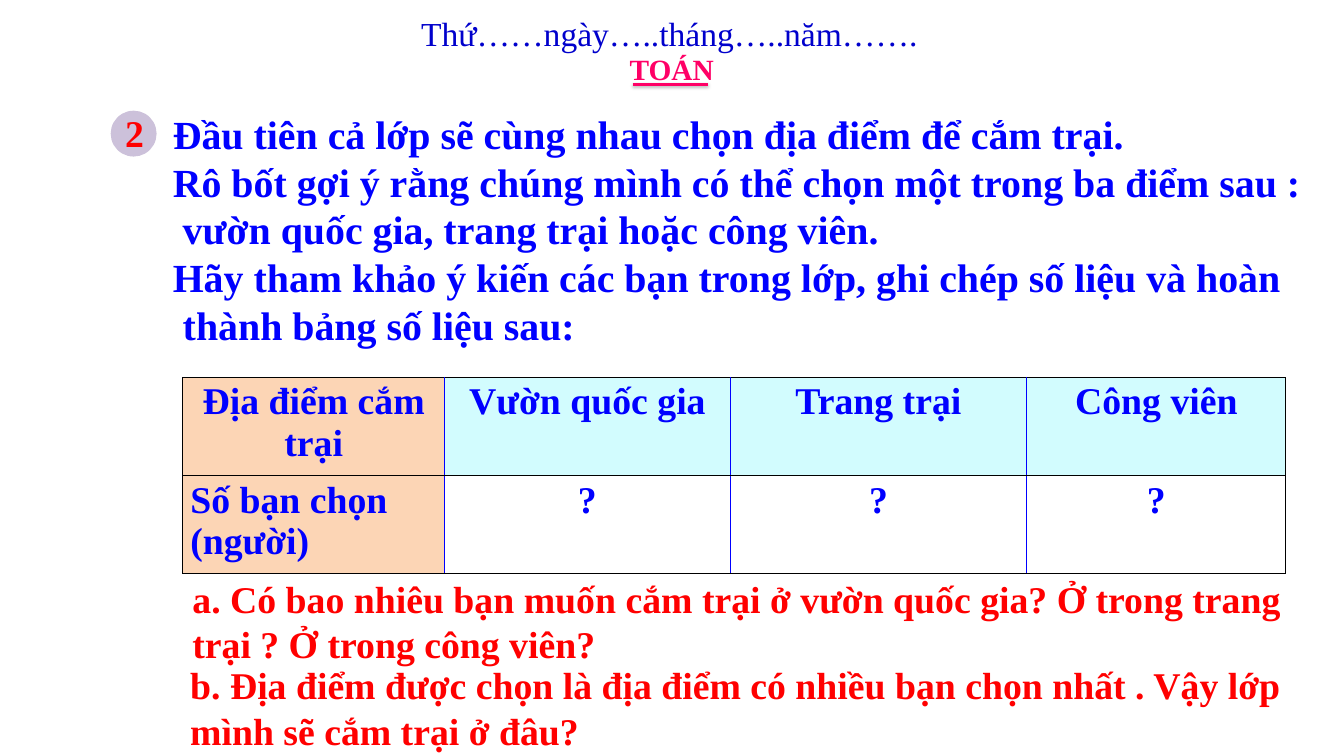
from lxml import etree
from pptx import Presentation
from pptx.dml.color import RGBColor
from pptx.enum.shapes import MSO_CONNECTOR, MSO_SHAPE
from pptx.enum.text import MSO_AUTO_SIZE, PP_ALIGN
from pptx.oxml import parse_xml
from pptx.oxml.ns import nsdecls, qn
from pptx.util import Inches, Pt

FONT = "Times New Roman"
NAVY = RGBColor(0x00, 0x00, 0xCC)
BLUE = RGBColor(0x00, 0x00, 0xFF)
PINK = RGBColor(0xFF, 0x00, 0x66)
RED = RGBColor(0xFF, 0x00, 0x00)
LILAC = RGBColor(0xCC, 0xC1, 0xDA)
PEACH = RGBColor(0xFC, 0xD5, 0xB5)
AQUA = RGBColor(0xD2, 0xFC, 0xFE)
WHITE = RGBColor(0xFF, 0xFF, 0xFF)
BLACK = RGBColor(0x00, 0x00, 0x00)

INTRO = [
    "Đầu tiên cả lớp sẽ cùng nhau chọn địa điểm để cắm trại.",
    "Rô bốt gợi ý rằng chúng mình có thể chọn một trong ba điểm sau :",
    " vườn quốc gia, trang trại hoặc công viên.",
    "Hãy tham khảo ý kiến các bạn trong lớp, ghi chép số liệu và hoàn",
    " thành bảng số liệu sau:",
]
# lines, box (left, top, width, height), size, colour, bold, wrap
TEXTS = [
    (["Thứ……ngày…..tháng…..năm……."], (5.48, 0.12, 6.84, 0.64), 32, NAVY, False, False),
    (["TOÁN"], (8.24, 0.63, 1.33, 0.57), 28, PINK, True, False),
    (["2"], (1.56, 1.4, 0.45, 0.71), 36, RED, True, False),
    (INTRO, (2.19, 1.4, 15.27, 3.3), 38, BLUE, True, False),
    (["a. Có bao nhiêu bạn muốn cắm trại ở vườn quốc gia? Ở trong trang trại ? "
      "Ở trong công viên?"], (2.45, 7.57, 14.83, 1.31), 36, RED, True, True),
    (["b. Địa điểm được chọn là địa điểm có nhiều bạn chọn nhất . Vậy lớp mình "
      "sẽ cắm trại ở đâu?"], (2.42, 8.72, 14.79, 1.31), 36, RED, True, True),
]
SURVEY = [
    ["Địa điểm cắm trại", "Vườn quốc gia", "Trang trại", "Công viên"],
    ["Số bạn chọn (người)", "?", "?", "?"],
]
COL_WIDTHS = [3.47, 3.78, 3.93, 3.43]
ROW_HEIGHT = 1.3


def style(p, size, color, bold):
    p.font.name, p.font.size, p.font.bold = FONT, Pt(size), bold
    p.font.color.rgb = color


def add_text(slide, lines, box, size, color, bold, wrap):
    tf = slide.shapes.add_textbox(*map(Inches, box)).text_frame
    tf.word_wrap = wrap
    tf.auto_size = MSO_AUTO_SIZE.SHAPE_TO_FIT_TEXT
    for i, line in enumerate(lines):
        p = tf.add_paragraph() if i else tf.paragraphs[0]
        p.text = line
        style(p, size, color, bold)


def add_badge(slide):
    s = slide.shapes.add_shape(MSO_SHAPE.OVAL, *map(Inches, (1.48, 1.48, 0.58, 0.58)))
    s.shadow.inherit = False
    s.fill.solid()
    s.fill.fore_color.rgb = LILAC
    s.line.color.rgb = LILAC
    s.line.width = Pt(2)


def add_underline(slide):
    line = slide.shapes.add_connector(
        MSO_CONNECTOR.STRAIGHT, *map(Inches, (8.38, 1.12, 9.38, 1.12)))
    line.line.color.rgb = PINK
    line.line.width = Pt(2)
    line._element.spPr.append(parse_xml(
        f'<a:effectLst {nsdecls("a")}><a:outerShdw blurRad="{Pt(3.1)}" dist="{Pt(1.6)}" '
        'dir="5400000" rotWithShape="0"><a:srgbClr val="000000"><a:alpha val="38000"/>'
        '</a:srgbClr></a:outerShdw></a:effectLst>'))


def set_borders(cell, colors):
    """Draw 1 pt borders from a dict of side letter to colour."""
    tc_pr = cell._tc.get_or_add_tcPr()
    for i, (side, color) in enumerate(colors.items()):
        ln = etree.Element(qn(f"a:ln{side}"), w=str(Pt(1)))
        fill = etree.SubElement(ln, qn("a:solidFill"))
        etree.SubElement(fill, qn("a:srgbClr"), val=str(color))
        tc_pr.insert(i, ln)


def add_survey(slide):
    rows, cols = len(SURVEY), len(COL_WIDTHS)
    table = slide.shapes.add_table(
        rows, cols, Inches(2.42), Inches(5), Inches(sum(COL_WIDTHS)),
        Inches(rows * ROW_HEIGHT)).table
    for column, width in zip(table.columns, COL_WIDTHS):
        column.width = Inches(width)
    for r, texts in enumerate(SURVEY):
        table.rows[r].height = Inches(ROW_HEIGHT)
        for c, text in enumerate(texts):
            cell = table.cell(r, c)
            cell.text = text
            p = cell.text_frame.paragraphs[0]
            style(p, 36, BLUE, True)
            p.alignment = PP_ALIGN.LEFT if r and not c else PP_ALIGN.CENTER
            cell.fill.solid()
            cell.fill.fore_color.rgb = PEACH if c == 0 else WHITE if r else AQUA
            set_borders(cell, {"L": BLUE if c else BLACK,
                               "R": BLUE if c < cols - 1 else BLACK,
                               "T": BLACK, "B": BLACK})


prs = Presentation()
prs.slide_width, prs.slide_height = Inches(17.8), Inches(10)
slide = prs.slides.add_slide(prs.slide_layouts[6])
add_underline(slide)
add_badge(slide)
for spec_row in TEXTS[:4]:
    add_text(slide, *spec_row)
add_survey(slide)
for spec_row in TEXTS[4:]:
    add_text(slide, *spec_row)
prs.save("out.pptx")
